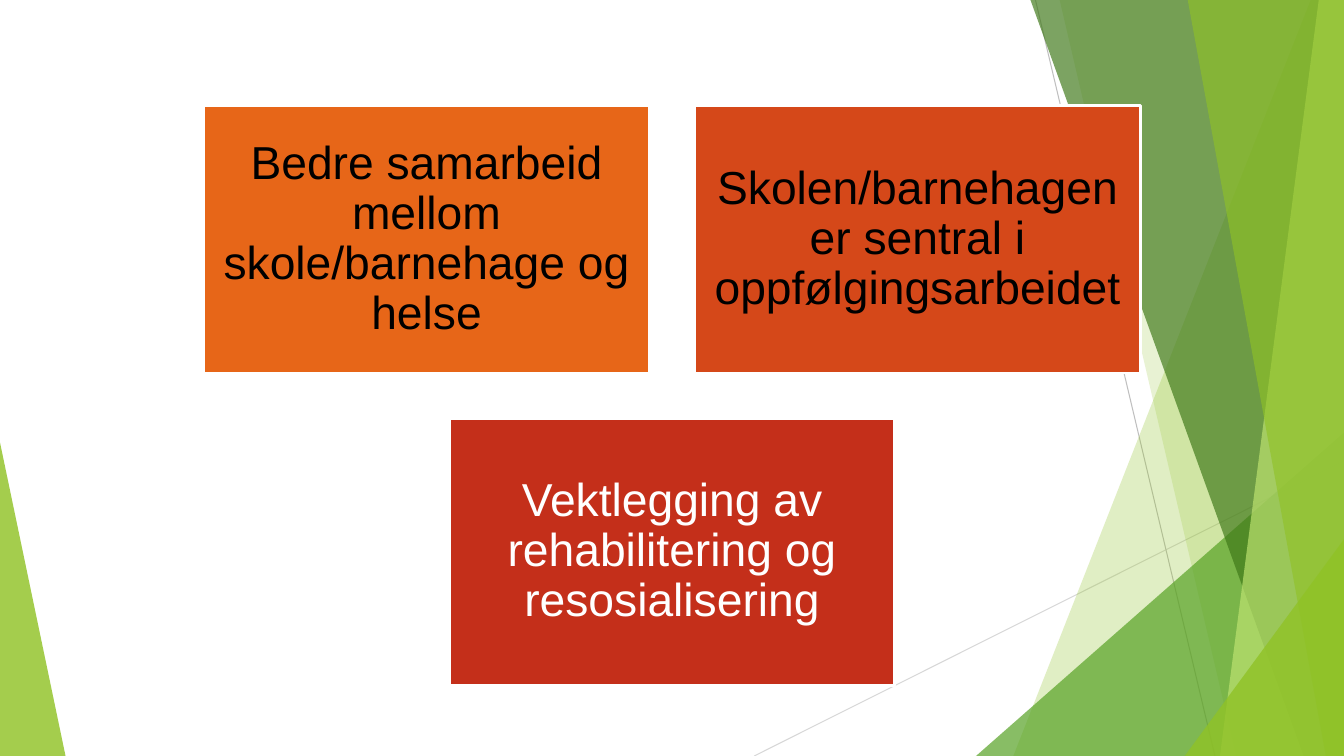
from dataclasses import dataclass

from lxml import etree
from pptx import Presentation
from pptx import util as u
from pptx.dml.color import RGBColor
from pptx.enum import shapes, text
from pptx.oxml.ns import qn


@dataclass(frozen=True)
class Theme:
    font: str = "Arial"
    size: float = 33
    black: str = "000000"
    white: str = "FFFFFF"
    orange: str = "E76618"
    rust: str = "D54819"
    red: str = "C42F1A"
    lime: str = "90C226"
    pale_lime: str = "BFE471"
    green: str = "54A021"
    dark_green: str = "3F7818"
    light_gray: str = "D8D8D8"
    gray: str = "BFBFBF"


THEME = Theme()
WIDTH, HEIGHT = 13.33, 7.5
BOX_W, BOX_H = 4.42, 2.65
BOX_GAP = 0.45
TOP = 1.05

LEFT_FACET = ([(0, 4.39), (0.65, HEIGHT), (0, HEIGHT)], THEME.lime, 82)
RAYS = [
    ((7.48, HEIGHT), (WIDTH, 4.57), THEME.light_gray),
    ((10.27, 0), (12.05, HEIGHT), THEME.gray),
]
RIGHT_FACETS = [
    ([(13, 0), (10.05, HEIGHT), (WIDTH, HEIGHT), (WIDTH, 0)], THEME.lime, 27),
    ([(10.51, 0), (12.26, HEIGHT), (WIDTH, HEIGHT), (WIDTH, 0)], THEME.lime, 20),
    ([(9.68, HEIGHT), (WIDTH, 4.29), (WIDTH, HEIGHT)], THEME.green, 69),
    ([(10.22, 0), (12.93, HEIGHT), (WIDTH, HEIGHT), (WIDTH, 0)], THEME.dark_green, 68),
    ([(13.08, 0), (12.1, HEIGHT), (WIDTH, HEIGHT), (WIDTH, 0)], THEME.pale_lime, 68),
    ([(11.78, 0), (13.15, HEIGHT), (WIDTH, HEIGHT), (WIDTH, 0)], THEME.lime, 62),
    ([(11.75, HEIGHT), (WIDTH, 5.35), (WIDTH, HEIGHT)], THEME.lime, 80),
]
ROWS = [
    [
        ("Bedre samarbeid mellom skole/barnehage og helse", THEME.orange, THEME.black),
        ("Skolen/barnehagen er sentral i oppfølgingsarbeidet", THEME.rust, THEME.black),
    ],
    [("Vektlegging av rehabilitering og resosialisering", THEME.red, THEME.white)],
]


def paint(sp, color, opacity=100):
    sp.shadow.inherit = False
    sp.fill.solid()
    sp.fill.fore_color.rgb = RGBColor.from_string(color)
    if opacity < 100:
        srgb = sp._element.spPr.find(qn("a:solidFill")).find(qn("a:srgbClr"))
        etree.SubElement(srgb, qn("a:alpha")).set("val", str(opacity * 1000))


def add_facet(s, points, color, opacity):
    start, *rest = [(u.Inches(x), u.Inches(y)) for x, y in points]
    builder = s.shapes.build_freeform(*start)
    builder.add_line_segments(rest, close=True)
    sp = builder.convert_to_shape()
    paint(sp, color, opacity)
    sp.line.fill.background()


def add_ray(s, start, end, color):
    ends = [u.Inches(v) for v in (*start, *end)]
    ray = s.shapes.add_connector(shapes.MSO_CONNECTOR.STRAIGHT, *ends)
    ray.line.color.rgb = RGBColor.from_string(color)
    ray.line.width = u.Pt(0.75)
    etree.SubElement(ray._element.spPr, qn("a:effectLst"))


def write(tf, content, *, size, font, color):
    tf.word_wrap = True
    tf.vertical_anchor = text.MSO_ANCHOR.MIDDLE
    tf.margin_left = tf.margin_right = u.Inches(0.14)
    tf.margin_top = tf.margin_bottom = u.Inches(0.14)
    p = tf.paragraphs[0]
    p.alignment = text.PP_ALIGN.CENTER
    p.line_spacing = 0.9
    r = p.add_run()
    r.text = content
    r.font.size = u.Pt(size)
    r.font.name = font
    r.font.color.rgb = RGBColor.from_string(color)


def add_box(s, left, top, content, fill, color):
    sp = s.shapes.add_shape(
        shapes.MSO_SHAPE.RECTANGLE,
        u.Inches(left), u.Inches(top), u.Inches(BOX_W), u.Inches(BOX_H),
    )
    paint(sp, fill)
    sp.line.color.rgb = RGBColor.from_string(THEME.white)
    sp.line.width = u.Pt(2)
    write(sp.text_frame, content, size=THEME.size, font=THEME.font, color=color)


def add_centered_row(s, top, boxes):
    pitch = BOX_W + BOX_GAP
    left = (WIDTH - len(boxes) * pitch + BOX_GAP) / 2
    for i, box in enumerate(boxes):
        add_box(s, left + i * pitch, top, *box)


def main():
    prs = Presentation()
    prs.slide_width = u.Inches(WIDTH)
    prs.slide_height = u.Inches(HEIGHT)
    s = prs.slides.add_slide(prs.slide_layouts[6])
    add_facet(s, *LEFT_FACET)
    for ray in RAYS:
        add_ray(s, *ray)
    for facet in RIGHT_FACETS:
        add_facet(s, *facet)
    for i, boxes in enumerate(ROWS):
        add_centered_row(s, TOP + i * (BOX_H + BOX_GAP), boxes)
    prs.save("out.pptx")


if __name__ == "__main__":
    main()
